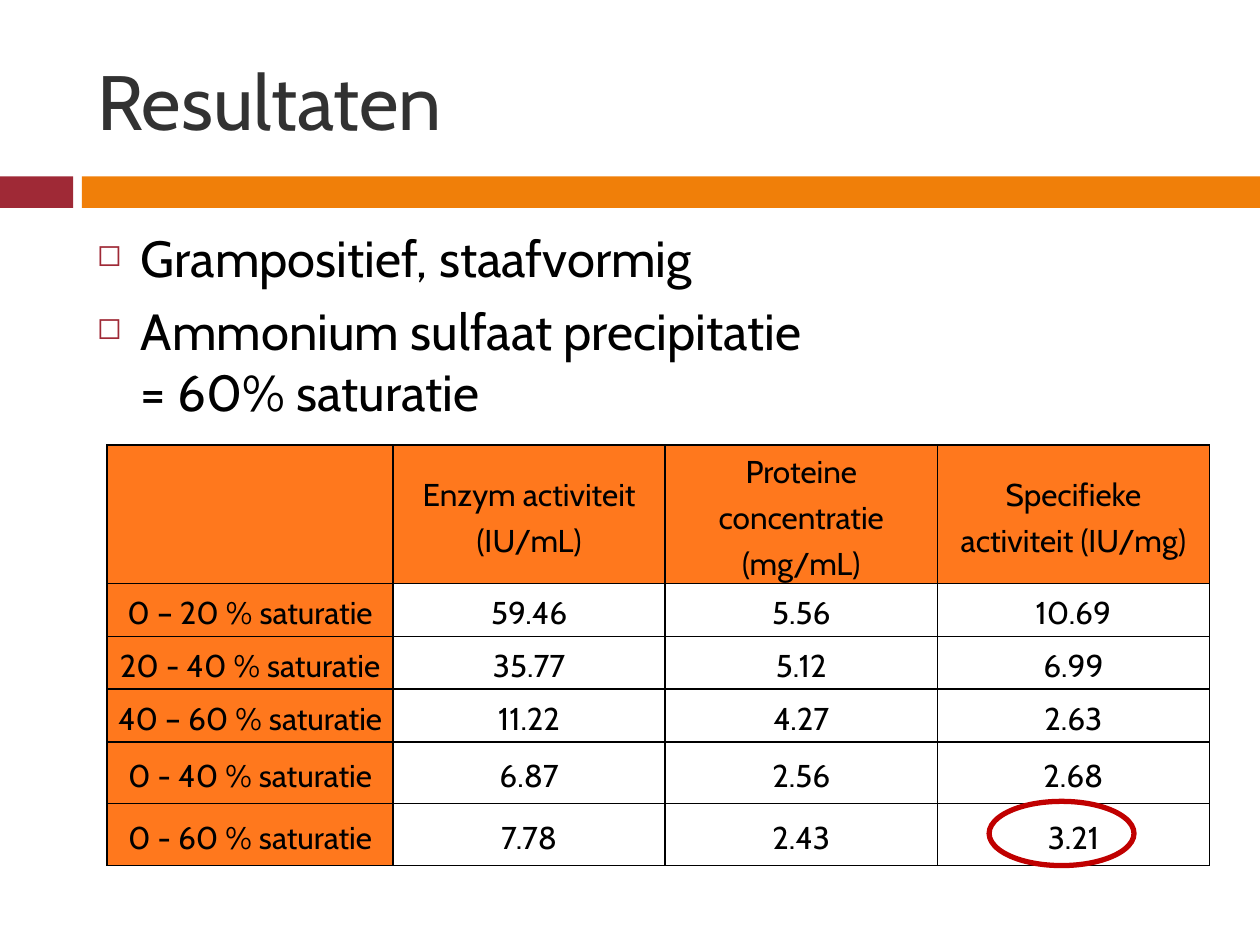
from lxml import etree
from pptx import Presentation
from pptx.dml.color import RGBColor
from pptx.enum.shapes import MSO_SHAPE
from pptx.enum.text import MSO_ANCHOR, PP_ALIGN
from pptx.oxml.ns import qn
from pptx.util import Inches, Pt

RECTANGLE, ELLIPSE = MSO_SHAPE.RECTANGLE, MSO_SHAPE.OVAL
MIDDLE = MSO_ANCHOR.MIDDLE
LEFT, CENTER = PP_ALIGN.LEFT, PP_ALIGN.CENTER

FONT = "Cabin"
BLACK = RGBColor(0x00, 0x00, 0x00)
GREY = RGBColor(0x32, 0x32, 0x32)
CRIMSON = RGBColor(0x9F, 0x29, 0x36)
AMBER = RGBColor(0xF0, 0x7F, 0x09)
ORANGE = RGBColor(0xFF, 0x78, 0x1D)
RED = RGBColor(0xC0, 0x00, 0x00)

# Content
TITLE = "Resultaten"
BULLETS = ["Grampositief, staafvormig",
           "Ammonium sulfaat precipitatie\n= 60% saturatie"]
ROWS = [
    ("", "Enzym activiteit (IU/mL)", "Proteine concentratie (mg/mL)",
     "Specifieke activiteit (IU/mg)"),
    ("0 – 20 % saturatie", "59.46", "5.56", "10.69"),
    ("20 - 40 % saturatie", "35.77", "5.12", "6.99"),
    ("40 – 60 % saturatie", "11.22", "4.27", "2.63"),
    ("0 - 40 % saturatie", "6.87", "2.56", "2.68"),
    ("0 - 60 % saturatie", "7.78", "2.43", "3.21"),
]
COLUMN_WIDTHS = [2.27, 2.16, 2.16, 2.16]
ROW_HEIGHTS = [1.1, 0.42, 0.42, 0.42, 0.49, 0.49]
BARS = [((0, 1.4, 0.58, 0.25), CRIMSON), ((0.65, 1.4, 9.35, 0.25), AMBER)]

# Formats
CELL_FORMAT = {"margin_left": Inches(0.07), "margin_right": Inches(0.07),
               "margin_top": 0, "margin_bottom": 0, "vertical_anchor": MIDDLE}
CELL_PARAGRAPH = {"alignment": CENTER, "line_spacing": 1.2,
                  "space_before": Pt(6), "space_after": Pt(6)}


def inches(*lengths):
    return [Inches(length) for length in lengths]


def apply(target, values):
    for name, value in values.items():
        setattr(target, name, value)


def write(para, text, size, color, **values):
    para.text = text
    apply(para, values)
    for span in para.runs:
        apply(span.font, {"name": FONT, "size": Pt(size)})
        span.font.color.rgb = color


def add_child(parent, tag, **attributes):
    child = etree.SubElement(parent, qn(tag))
    for name, value in attributes.items():
        child.set(name, str(value))
    return child


def add_bullet(para):
    properties = para._p.get_or_add_pPr()
    properties.set("marL", str(Inches(0.35)))
    properties.set("indent", str(-Inches(0.35)))
    add_child(add_child(properties, "a:buClr"), "a:srgbClr", val=CRIMSON)
    add_child(properties, "a:buSzPct", val=60000)
    add_child(properties, "a:buChar", char="◻")


def add_borders(cell):
    properties = cell._tc.get_or_add_tcPr()
    for side in ("a:lnL", "a:lnR", "a:lnT", "a:lnB"):
        line = add_child(properties, side, w=Pt(1))
        add_child(add_child(line, "a:solidFill"), "a:srgbClr", val=BLACK)


deck = Presentation()
deck.slide_width, deck.slide_height = inches(10, 7.5)
page = deck.slides.add_slide(deck.slide_layouts[5])

# Bars under the title
for place, color in BARS:
    bar = page.shapes.add_shape(RECTANGLE, *inches(*place))
    bar.shadow.inherit = False
    bar.fill.solid()
    bar.fill.fore_color.rgb = color
    bar.line.fill.background()

# Title
title = page.shapes.title
title.left, title.top, title.width, title.height = inches(0.67, 0.25, 8.92, 1.08)
title.text_frame.vertical_anchor = MIDDLE
write(title.text_frame.paragraphs[0], TITLE, 44, GREY, alignment=LEFT)

# Bullets
frame = page.shapes.add_textbox(*inches(0.67, 1.75, 8.92, 4.92)).text_frame
frame.word_wrap = True
for index, text in enumerate(BULLETS):
    para = frame.add_paragraph() if index else frame.paragraphs[0]
    write(para, text, 29, BLACK, space_before=Pt(7))
    add_bullet(para)

# Table of results
table = page.shapes.add_table(
    len(ROWS), len(COLUMN_WIDTHS),
    *inches(0.85, 3.53, sum(COLUMN_WIDTHS), sum(ROW_HEIGHTS))).table
apply(table, {"first_row": False, "horz_banding": False})
for column, width in zip(table.columns, COLUMN_WIDTHS):
    column.width = Inches(width)
for row, height in zip(table.rows, ROW_HEIGHTS):
    row.height = Inches(height)
for r, texts in enumerate(ROWS):
    for c, text in enumerate(texts):
        cell = table.cell(r, c)
        apply(cell, CELL_FORMAT)
        write(cell.text_frame.paragraphs[0], text, 18, BLACK, **CELL_PARAGRAPH)
        add_borders(cell)
        if r == 0 or c == 0:
            cell.fill.solid()
            cell.fill.fore_color.rgb = ORANGE
        else:
            cell.fill.background()

# Ring around the final value
ring = page.shapes.add_shape(ELLIPSE, *inches(7.85, 6.36, 1.15, 0.51))
ring.shadow.inherit = False
ring.fill.background()
ring.line.color.rgb = RED
ring.line.width = Pt(3)

deck.save("out.pptx")
